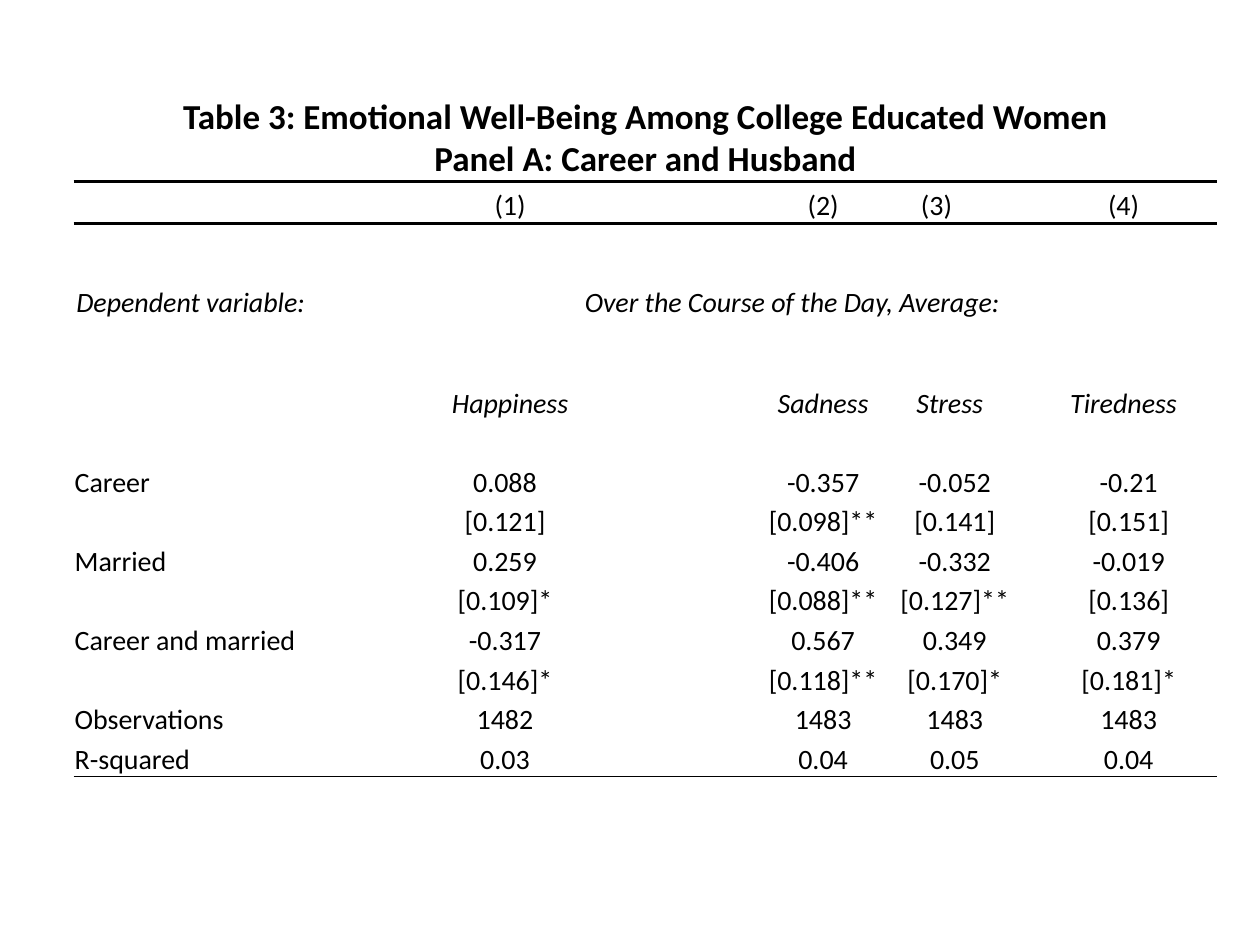
from dataclasses import dataclass

from lxml import etree
from pptx import Presentation
from pptx.dml.color import RGBColor
from pptx.enum.text import MSO_ANCHOR, PP_ALIGN
from pptx.oxml.ns import qn
from pptx.util import Pt

BOTTOM, MIDDLE = MSO_ANCHOR.BOTTOM, MSO_ANCHOR.MIDDLE
CENTER, LEFT = PP_ALIGN.CENTER, PP_ALIGN.LEFT
PLAIN_TABLE_STYLE = "{2D5ABB26-0587-4C30-8999-92F81FD0307C}"


@dataclass(frozen=True)
class Theme:
    font: str = "Calibri"
    ink: str = "000000"
    title_size: int = 20
    body_size: int = 16
    heavy_rule: int = 2
    light_rule: int = 1
    margin: float = 0.7


THEME = Theme()

COLUMN_WIDTHS = [137.5, 24.5, 5.8, 163.4, 64.8, 64.8, 64.8, 15.1, 5.8, 5.8, 101.5]
ROW_HEIGHT = 22.6
ROW_HEIGHTS = [49, 23.8, 90.4] + [ROW_HEIGHT] * 11
LAST_COLUMN = len(COLUMN_WIDTHS) - 1

TITLE = [
    "Table 3: Emotional Well-Being Among College Educated Women",
    "Panel A: Career and Husband",
]
MODEL_NUMBERS = {3: "(1)", 5: "(2)", 6: "(3)", 9: "(4)"}
VARIABLE_LABELS = {0: "Dependent variable: ", 3: "Over the Course of the Day, Average:"}
EMOTIONS = {3: "Happiness", 5: "Sadness", 6: "Stress", 9: "Tiredness"}

RESULT_COLUMNS = [0, 2, 5, 6, 10]
RESULTS = [
    ["Career", "0.088", "-0.357", "-0.052", "-0.21"],
    ["", "[0.121]", "[0.098]**", "[0.141]", "[0.151]"],
    ["Married", "0.259", "-0.406", "-0.332", "-0.019"],
    ["", "[0.109]*", "[0.088]**", "[0.127]**", "[0.136]"],
    ["Career and married", "-0.317", "0.567", "0.349", "0.379"],
    ["", "[0.146]*", "[0.118]**", "[0.170]*", "[0.181]*"],
    ["Observations", "1482", "1483", "1483", "1483"],
    ["R-squared", "0.03", "0.04", "0.05", "0.04"],
]
FIRST_RESULT_ROW = 5
LAST_RESULT_ROW = FIRST_RESULT_ROW + len(RESULTS) - 1

HEADER_SPANS = {
    0: [(0, LAST_COLUMN)],
    1: [(1, 2), (7, 8), (9, LAST_COLUMN)],
    2: [(1, 2), (3, LAST_COLUMN)],
    3: [(1, 2), (6, 7), (9, LAST_COLUMN)],
    4: [(1, LAST_COLUMN)],
}
RESULT_SPANS = [(2, 3), (6, 8)]


def set_attributes(target, values):
    for name, value in values.items():
        setattr(target, name, value)


def write_cell(cell, lines, alignment=CENTER, anchor=BOTTOM,
               size=THEME.body_size, bold=False, italic=False):
    cell.vertical_anchor = anchor
    frame = cell.text_frame
    for index, line in enumerate(lines):
        paragraph = frame.add_paragraph() if index else frame.paragraphs[0]
        paragraph.alignment = alignment
        run = paragraph.add_run()
        run.text = line
        set_attributes(run.font, {"name": THEME.font, "size": Pt(size),
                                  "bold": bold, "italic": italic})
        run.font.color.rgb = RGBColor.from_string(THEME.ink)


def write_row(table, row, texts, **formats):
    for column, text in texts.items():
        write_cell(table.cell(row, column), [text], **formats)


def prepare_cell(cell):
    margin = Pt(THEME.margin)
    set_attributes(cell, {"margin_left": margin, "margin_right": margin,
                          "margin_top": margin, "margin_bottom": 0})
    cell.fill.background()
    end_format = etree.SubElement(cell.text_frame.paragraphs[0]._p, qn("a:endParaRPr"))
    end_format.set("sz", str(THEME.body_size * 100))


def add_border(cell, side, width):
    border = etree.Element(qn(f"a:{side}"), w=str(Pt(width)))
    fill = etree.SubElement(border, qn("a:solidFill"))
    etree.SubElement(fill, qn("a:srgbClr"), val=THEME.ink)
    cell._tc.get_or_add_tcPr().insert(0, border)


def rule_below(table, row, width):
    for column in range(len(COLUMN_WIDTHS)):
        add_border(table.cell(row, column), "lnB", width)
        add_border(table.cell(row + 1, column), "lnT", width)


def merge_spans(table):
    for row in range(len(ROW_HEIGHTS)):
        for first, last in HEADER_SPANS.get(row, RESULT_SPANS):
            table.cell(row, first).merge(table.cell(row, last))


def add_regression_table(slide, left, top):
    shape = slide.shapes.add_table(
        len(ROW_HEIGHTS), len(COLUMN_WIDTHS), Pt(left), Pt(top),
        Pt(sum(COLUMN_WIDTHS)), Pt(sum(ROW_HEIGHTS)))
    table = shape.table
    set_attributes(table, {"first_row": False, "horz_banding": False})
    table._tbl.tblPr.find(qn("a:tableStyleId")).text = PLAIN_TABLE_STYLE
    for column, width in zip(table.columns, COLUMN_WIDTHS):
        column.width = Pt(width)
    for row, height in zip(table.rows, ROW_HEIGHTS):
        row.height = Pt(height)
    for cell in table.iter_cells():
        prepare_cell(cell)
    merge_spans(table)

    for paragraph_end in table._tbl.findall(".//" + qn("a:endParaRPr")):
        paragraph_end.set("lang", "en-US")
    write_cell(table.cell(0, 0), TITLE, size=THEME.title_size, bold=True)
    write_row(table, 1, MODEL_NUMBERS)
    write_row(table, 2, VARIABLE_LABELS, anchor=MIDDLE, italic=True)
    write_row(table, 3, EMOTIONS, italic=True)
    for row, (label, *values) in enumerate(RESULTS, FIRST_RESULT_ROW):
        if label:
            write_row(table, row, {RESULT_COLUMNS[0]: label}, alignment=LEFT)
        write_row(table, row, dict(zip(RESULT_COLUMNS[1:], values)))

    rule_below(table, 0, THEME.heavy_rule)
    rule_below(table, LAST_RESULT_ROW, THEME.light_rule)


def main():
    presentation = Presentation()
    set_attributes(presentation, {"slide_width": Pt(720), "slide_height": Pt(540)})
    slide = presentation.slides.add_slide(presentation.slide_layouts[6])
    add_regression_table(slide, left=42, top=54)
    presentation.save("out.pptx")


if __name__ == "__main__":
    main()
